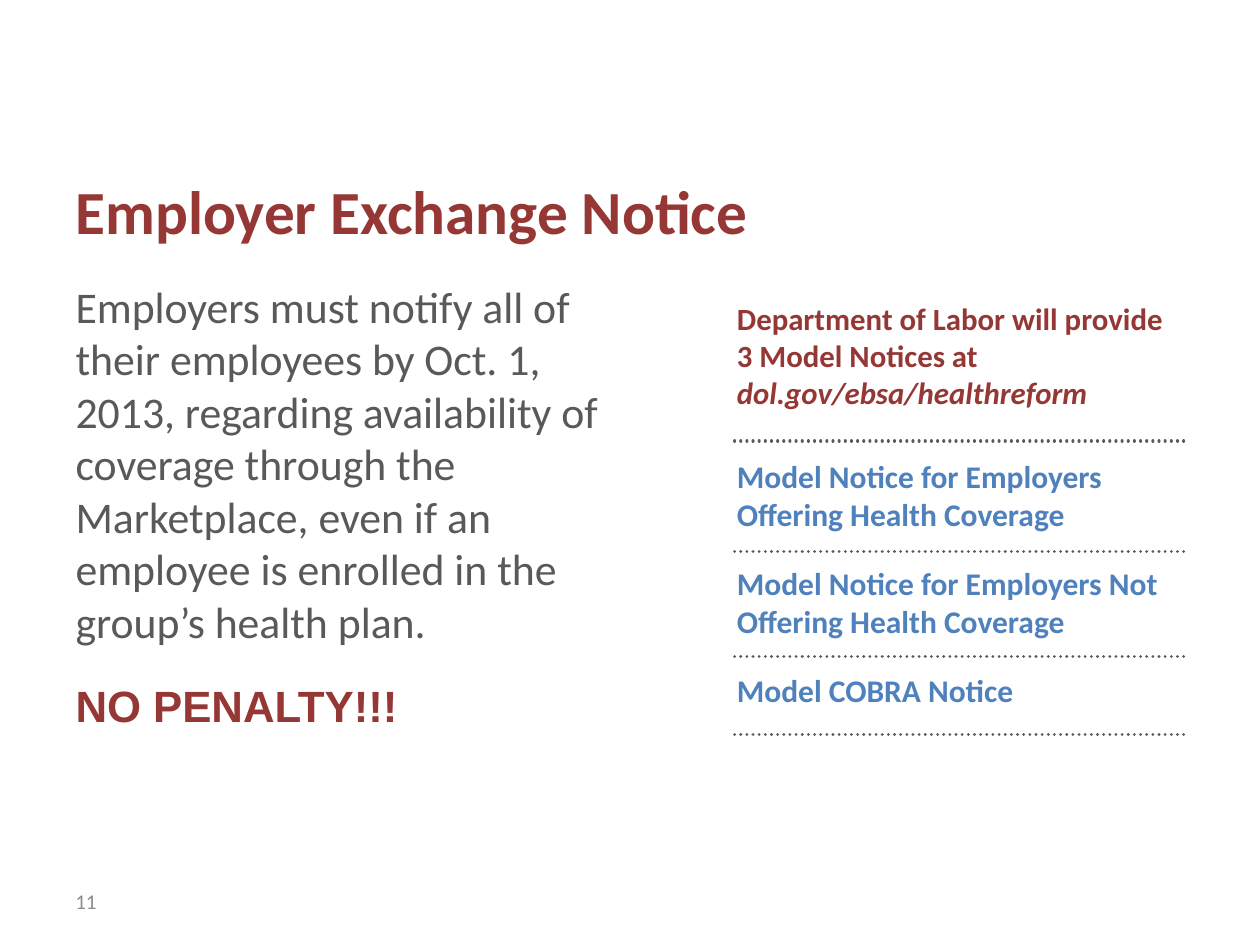
from lxml.etree import SubElement
from pptx import Presentation
from pptx.dml.color import RGBColor
from pptx.enum.dml import MSO_LINE
from pptx.enum.shapes import MSO_CONNECTOR
from pptx.enum.text import MSO_ANCHOR, MSO_AUTO_SIZE, PP_ALIGN
from pptx.oxml.ns import qn
from pptx.util import Inches, Pt

RED = RGBColor(0x95, 0x37, 0x35)
BLUE = RGBColor(0x4F, 0x81, 0xBD)
DARK = RGBColor(0x59, 0x59, 0x59)
GREY = RGBColor(0x8C, 0x8C, 0x8C)


def add_run(p, text, size, color, font="Calibri", bold=False, italic=False):
    r = p.add_run()
    r.text = text
    r.font.name, r.font.size = font, Pt(size)
    r.font.bold, r.font.italic = bold, italic
    r.font.color.rgb = color


def place(sp, left, top, width, height, anchor=MSO_ANCHOR.TOP):
    """Set the box of a shape and return its text frame, wrapped and unscaled."""
    sp.left, sp.top = Inches(left), Inches(top)
    sp.width, sp.height = Inches(width), Inches(height)
    tf = sp.text_frame
    tf.word_wrap = True
    tf.auto_size = MSO_AUTO_SIZE.NONE
    tf.vertical_anchor = anchor
    return tf


def next_paragraph(tf, first, space=18):
    if first:
        p = tf.paragraphs[0]
    else:
        p = tf.add_paragraph()
    p.space_before = Pt(0 if first else space)
    p.alignment = PP_ALIGN.LEFT
    return p


def remove_bullet(p):
    pPr = p._p.get_or_add_pPr()
    pPr.set("marL", "0")
    pPr.set("indent", "0")
    SubElement(pPr, qn("a:buNone"))


def add_title(s, *box):
    tf = place(s.shapes.title, *box, anchor=MSO_ANCHOR.MIDDLE)
    add_run(next_paragraph(tf, True), "Employer Exchange Notice", 35, RED, bold=True)


def add_body(s, *box):
    tf = place(s.placeholders[1], *box)
    p = next_paragraph(tf, True)
    remove_bullet(p)
    add_run(p, "Employers must notify all of their employees by Oct. 1, 2013, "
               "regarding availability of coverage through the Marketplace, "
               "even if an employee is enrolled in the group’s health plan.", 25, DARK)
    p = next_paragraph(tf, False)
    remove_bullet(p)
    add_run(p, "NO PENALTY!!!", 25, RED, font="Arial", bold=True)


def add_text_box(s, *box, anchor=MSO_ANCHOR.TOP):
    return place(s.shapes.add_textbox(0, 0, 0, 0), *box, anchor=anchor)


def add_dotted_rule(s, left, right, y):
    line = s.shapes.add_connector(MSO_CONNECTOR.STRAIGHT, Inches(left), Inches(y),
                                  Inches(right), Inches(y))
    line.line.color.rgb = DARK
    line.line.width = Pt(1.75)
    line.line.dash_style = MSO_LINE.ROUND_DOT
    spPr = line._element.spPr
    spPr.find(qn("a:ln")).set("cap", "rnd")
    SubElement(spPr, qn("a:effectLst"))


def add_notices(s, left, top):
    """Heading and list of model notices, parted by dotted rules."""
    p = next_paragraph(add_text_box(s, left, top, 3.67, 1.08), True)
    add_run(p, "Department of Labor will provide 3 Model Notices at ", 17.6, RED, bold=True)
    add_run(p, "dol.gov/ebsa/healthreform", 17.6, RED, bold=True, italic=True)

    tf = add_text_box(s, left, top + 1.25, 3.92, 2.12)
    notices = ("Model Notice for Employers Offering Health Coverage",
               "Model Notice for Employers Not Offering Health Coverage",
               "Model COBRA Notice")
    for i, notice in enumerate(notices):
        add_run(next_paragraph(tf, i == 0), notice, 18, BLUE, bold=True)

    for offset in (1.17, 2.05, 2.88, 3.5):
        add_dotted_rule(s, left + 0.08, left + 3.67, top + offset)


def add_page_number(s, *box):
    tf = add_text_box(s, *box, anchor=MSO_ANCHOR.MIDDLE)
    add_run(next_paragraph(tf, True), "11", 12, GREY)


def main():
    prs = Presentation()
    prs.slide_width, prs.slide_height = Inches(10), Inches(7.5)
    s = prs.slides.add_slide(prs.slide_layouts[1])
    add_title(s, 0.5, 1.17, 9, 1)
    add_body(s, 0.5, 2.17, 4.75, 4.67)
    add_page_number(s, 0.5, 6.95, 2.33, 0.4)
    add_notices(s, 5.75, 2.33)
    prs.save("out.pptx")


if __name__ == "__main__":
    main()
